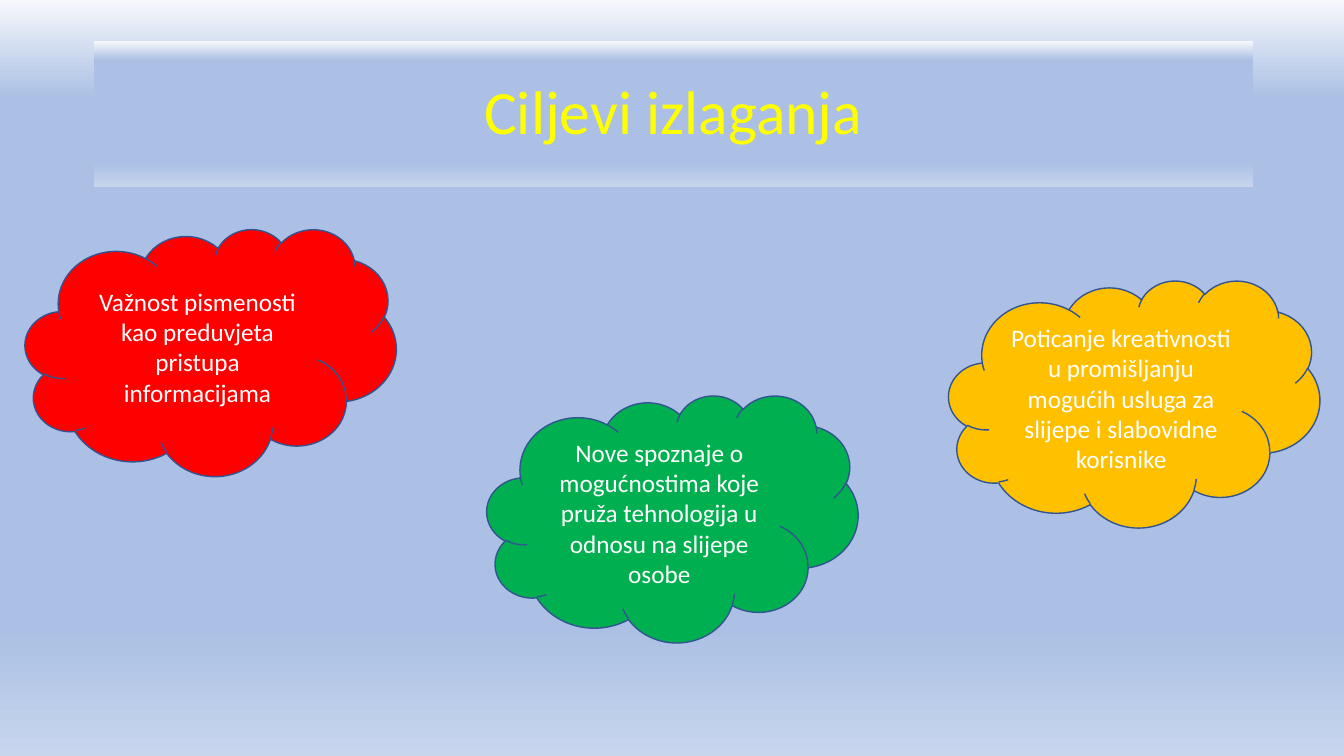
from lxml import etree
from pptx import Presentation
from pptx import util as u
from pptx.dml.color import RGBColor
from pptx.enum import shapes, text
from pptx.oxml.ns import qn

COLORS = {
    "pale": "F6F8FC", "sky": "ABC0E4", "mist": "C7D5ED",
    "yellow": "FFFF00", "white": "FFFFFF", "outline": "325491",
    "red": "FF0000", "green": "00B050", "amber": "FFC000",
}
SKY_STOPS = [(0, "pale"), (13, "sky"), (83, "sky"), (100, "mist")]
CLOUD_SIZE = (3.68, 2.45)


def rgb(name):
    return RGBColor.from_string(COLORS[name])


class SlideBuilder:
    font = "Calibri"

    def __init__(self, slide):
        self.slide = slide

    def sky_gradient(self, fill, owner):
        """Fill top to bottom with the four sky stops."""
        fill.gradient()
        fill.gradient_angle = 270
        stops = next(owner.iter(qn("a:gsLst")))
        for stop in list(stops):
            stops.remove(stop)
        for pos, name in SKY_STOPS:
            gs = etree.SubElement(stops, qn("a:gs"), pos=str(pos * 1000))
            etree.SubElement(gs, qn("a:srgbClr"), val=COLORS[name])

    def background(self):
        self.sky_gradient(self.slide.background.fill, self.slide.element)

    def shape(self, kind, left, top, width, height, wording, size, color):
        sp = self.slide.shapes.add_shape(
            kind, *(u.Inches(v) for v in (left, top, width, height)))
        sp.shadow.inherit = False
        tf = sp.text_frame
        tf.word_wrap = True
        tf.vertical_anchor = text.MSO_ANCHOR.MIDDLE
        tf.text = wording
        p = tf.paragraphs[0]
        p.alignment = text.PP_ALIGN.CENTER
        font = p.runs[0].font
        font.name, font.size = self.font, u.Pt(size)
        font.color.rgb = rgb(color)
        return sp

    def title(self, wording):
        sp = self.shape(shapes.MSO_SHAPE.RECTANGLE, 0.93, 0.41, 11.5, 1.45,
                        wording, 44, "yellow")
        self.sky_gradient(sp.fill, sp.element)
        sp.line.fill.background()
        sp.text_frame.paragraphs[0].line_spacing = 0.9

    def cloud(self, left, top, color, wording):
        sp = self.shape(shapes.MSO_SHAPE.CLOUD, left, top, *CLOUD_SIZE,
                        wording, 18, "white")
        sp.fill.solid()
        sp.fill.fore_color.rgb = rgb(color)
        sp.line.color.rgb = rgb("outline")
        sp.line.width = u.Pt(1)


def main():
    prs = Presentation()
    prs.slide_width, prs.slide_height = u.Inches(13.33), u.Inches(7.5)
    s = SlideBuilder(prs.slides.add_slide(prs.slide_layouts[6]))

    # Background and title
    s.background()
    s.title("Ciljevi izlaganja")

    # Goals
    s.cloud(0.25, 2.27, "red",
            "Važnost pismenosti kao preduvjeta pristupa informacijama")
    s.cloud(4.83, 3.92, "green",
            "Nove spoznaje o mogućnostima koje pruža tehnologija "
            "u odnosu na slijepe osobe")
    s.cloud(9.41, 2.78, "amber",
            "Poticanje kreativnosti u promišljanju mogućih usluga "
            "za slijepe i slabovidne korisnike")

    prs.save("out.pptx")


if __name__ == "__main__":
    main()
